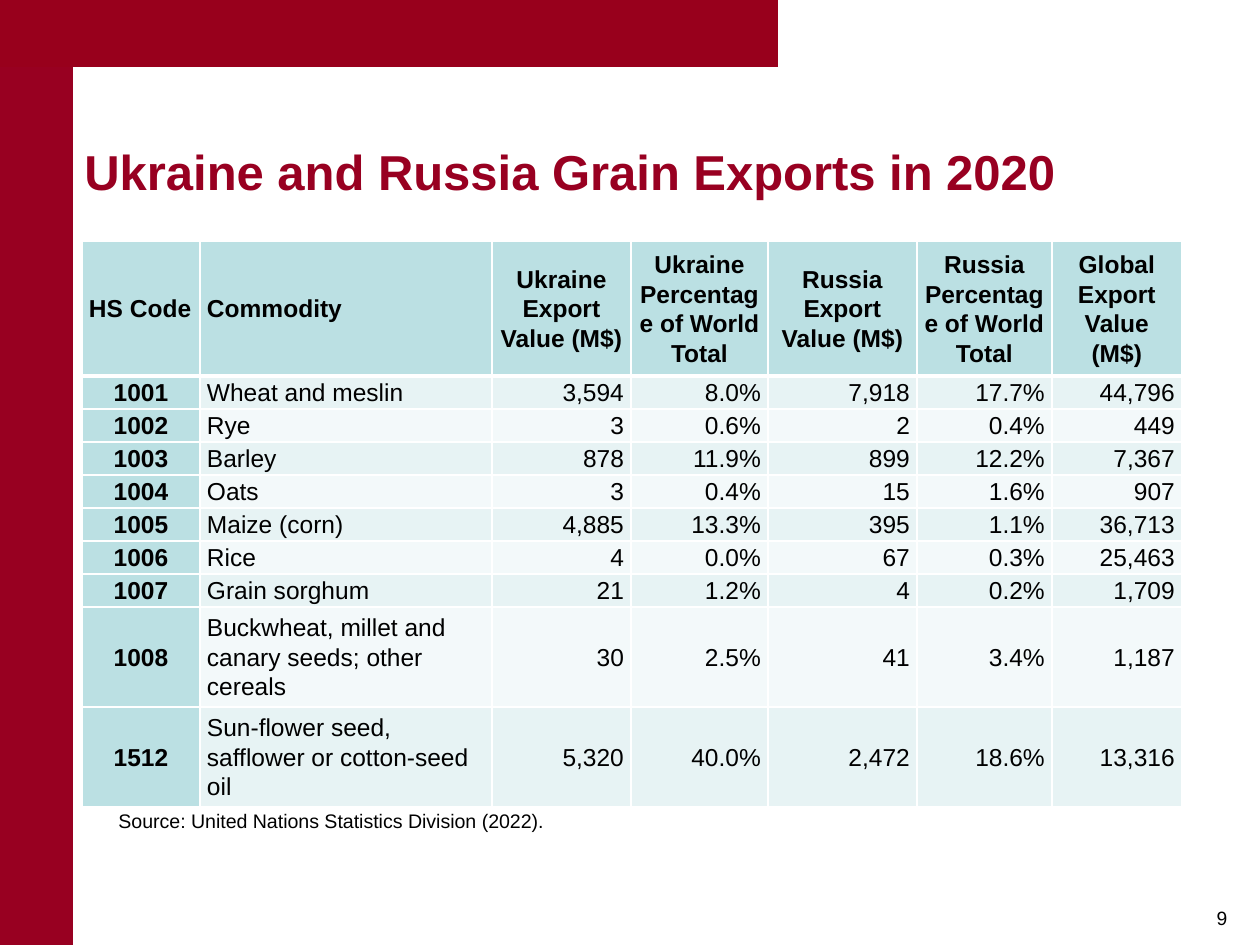
from dataclasses import dataclass
from lxml.etree import SubElement
from pptx import Presentation
from pptx.dml.color import RGBColor as RGB
from pptx.enum.shapes import MSO_SHAPE as Shape
from pptx.enum.text import MSO_ANCHOR as Anchor, PP_ALIGN as Align
from pptx.oxml.ns import qn
from pptx.util import Pt


@dataclass
class Theme:
    font: str = "Arial"
    side: str = "980021"
    top: str = "98001C"
    ink: str = "000000"
    rule: str = "FFFFFF"
    head: str = "BBE0E3"
    bands: tuple = ("E7F3F4", "F3F9FA")
    title: float = 28
    body: float = 14
    note: float = 11.2
    page: float = 11


theme = Theme()
PX = 914400 // 126


def style(frame, text, size, color, bold=False, align=Align.LEFT):
    """Put text in a frame and format its one paragraph."""
    frame.text = text
    frame.word_wrap = True
    para = frame.paragraphs[0]
    para.alignment = align
    font = para.runs[0].font
    font.name, font.size, font.bold = theme.font, Pt(size), bold
    font.color.rgb = RGB.from_string(color)
    return para


def edge(cell, side, width):
    line = SubElement(cell._tc.get_or_add_tcPr(), qn("a:ln" + side), w=str(Pt(width)))
    fill = SubElement(line, qn("a:solidFill"))
    SubElement(fill, qn("a:srgbClr"), val=theme.rule)


deck = Presentation()
deck.slide_width, deck.slide_height = 1260 * PX, 945 * PX
slide = deck.slides.add_slide(deck.slide_layouts[6])
shapes = slide.shapes

# Red frame
for wide, high, color in [(73, 945, theme.side), (778, 67, theme.top)]:
    bar = shapes.add_shape(Shape.RECTANGLE, 0, 0, wide * PX, high * PX)
    bar.shadow.inherit = False
    bar.fill.solid()
    bar.fill.fore_color.rgb = RGB.from_string(color)
    bar.line.fill.background()

# Title, source note and page number
labels = [
    ((72, 102, 1118, 137), "Ukraine and Russia Grain Exports in 2020",
     theme.title, theme.side, True, Align.LEFT, Anchor.MIDDLE),
    ((106, 803, 982, 36), "Source: United Nations Statistics Division (2022).",
     theme.note, theme.ink, False, Align.LEFT, Anchor.TOP),
    ((1191, 900, 62, 36), "9",
     theme.page, theme.ink, False, Align.CENTER, Anchor.TOP),
]
for area, text, size, color, bold, align, anchor in labels:
    box = shapes.add_textbox(*[n * PX for n in area])
    box.text_frame.vertical_anchor = anchor
    style(box.text_frame, text, size, color, bold, align)

# Export table
rows = [
    ("HS Code", "Commodity", "Ukraine Export Value (M$)",
     "Ukraine Percentage of World Total", "Russia Export Value (M$)",
     "Russia Percentage of World Total", "Global Export Value (M$)"),
    ("1001", "Wheat and meslin", "3,594", "8.0%", "7,918", "17.7%", "44,796"),
    ("1002", "Rye", "3", "0.6%", "2", "0.4%", "449"),
    ("1003", "Barley", "878", "11.9%", "899", "12.2%", "7,367"),
    ("1004", "Oats", "3", "0.4%", "15", "1.6%", "907"),
    ("1005", "Maize (corn)", "4,885", "13.3%", "395", "1.1%", "36,713"),
    ("1006", "Rice", "4", "0.0%", "67", "0.3%", "25,463"),
    ("1007", "Grain sorghum", "21", "1.2%", "4", "0.2%", "1,709"),
    ("1008", "Buckwheat, millet and canary seeds; other cereals",
     "30", "2.5%", "41", "3.4%", "1,187"),
    ("1512", "Sun-flower seed, safflower or cotton-seed oil",
     "5,320", "40.0%", "2,472", "18.6%", "13,316"),
]
widths = [118, 292, 139, 137, 149, 135, 130]
heights = [135] + [33] * 7 + [100] * 2
table = shapes.add_table(len(rows), len(widths), 82 * PX, 241 * PX,
                         sum(widths) * PX, sum(heights) * PX).table
for col, wide in zip(table.columns, widths):
    col.width = wide * PX
for row, high in zip(table.rows, heights):
    row.height = high * PX

head_align = [Align.LEFT] * 2 + [Align.CENTER] * 5
body_align = [Align.CENTER, Align.LEFT] + [Align.RIGHT] * 5
for r, row in enumerate(rows):
    for c, text in enumerate(row):
        cell = table.cell(r, c)
        bold = r == 0 or c == 0
        align = (body_align if r else head_align)[c]
        para = style(cell.text_frame, text, theme.body, theme.ink, bold, align)
        para.line_spacing = 1.07
        cell.vertical_anchor = Anchor.MIDDLE
        cell.margin_left = cell.margin_right = 7 * PX
        cell.margin_top = cell.margin_bottom = 0
        for side, width in [("L", 1), ("R", 1), ("T", 3 if r == 1 else 1),
                            ("B", 3 if r == 0 else 1)]:
            edge(cell, side, width)
        cell.fill.solid()
        color = theme.head if bold else theme.bands[(r - 1) % 2]
        cell.fill.fore_color.rgb = RGB.from_string(color)

deck.save("out.pptx")
